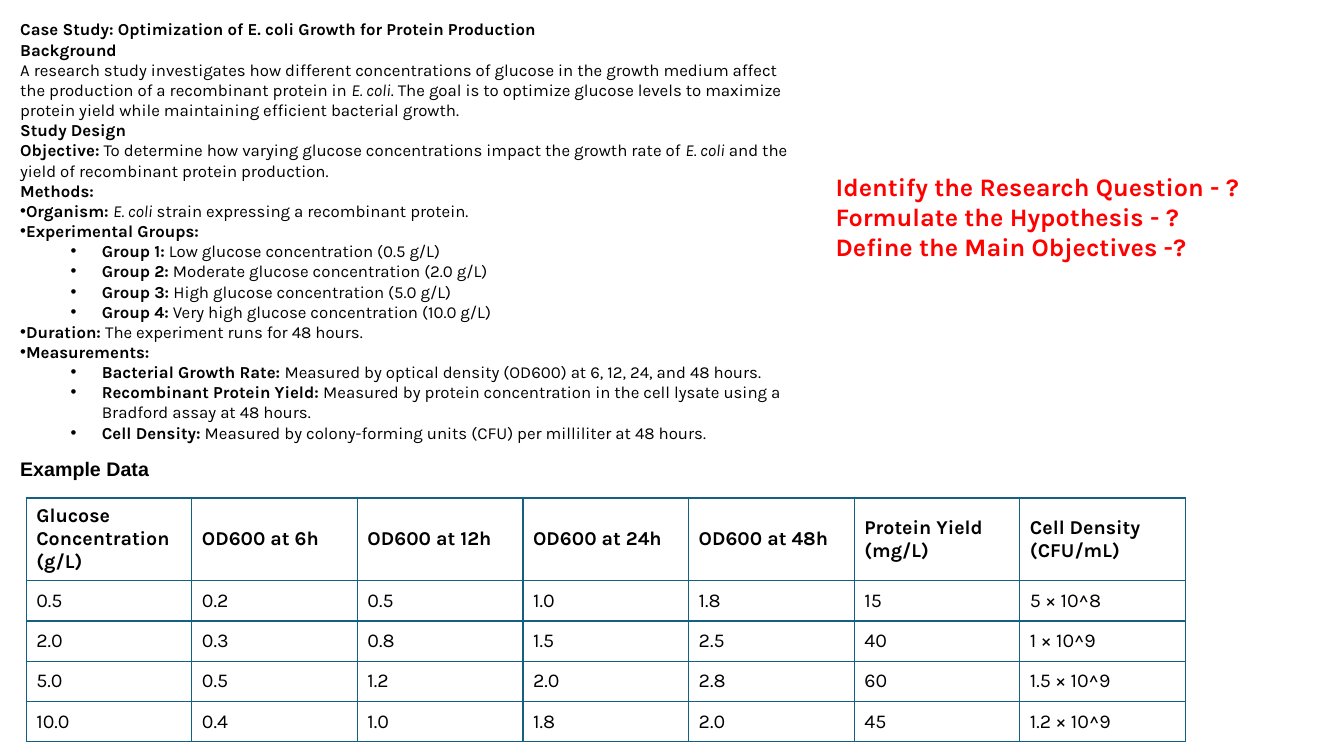
from pptx import Presentation
from pptx.dml.color import RGBColor
from pptx.enum import text
from pptx.oxml import parse_xml
from pptx.oxml.ns import nsdecls
from pptx.util import Inches, Pt

BLACK, RED, TEAL = "000000", "FF0000", "156082"
SPECIES = "E. coli"

# (bullet level or None, bold label, regular text)
CASE_STUDY = [
    (None, "Case Study: Optimization of E. coli Growth for Protein Production", ""),
    (None, "Background", ""),
    (None, "", "A research study investigates how different concentrations of glucose in the "
               "growth medium affect the production of a recombinant protein in E. coli. The goal "
               "is to optimize glucose levels to maximize protein yield while maintaining "
               "efficient bacterial growth."),
    (None, "Study Design", ""),
    (None, "Objective:", " To determine how varying glucose concentrations impact the growth rate "
                         "of E. coli and the yield of recombinant protein production."),
    (None, "Methods:", ""),
    (0, "Organism: ", "E. coli strain expressing a recombinant protein."),
    (0, "Experimental Groups:", ""),
    (1, "Group 1:", " Low glucose concentration (0.5 g/L)"),
    (1, "Group 2:", " Moderate glucose concentration (2.0 g/L)"),
    (1, "Group 3:", " High glucose concentration (5.0 g/L)"),
    (1, "Group 4:", " Very high glucose concentration (10.0 g/L)"),
    (0, "Duration:", " The experiment runs for 48 hours."),
    (0, "Measurements:", ""),
    (1, "Bacterial Growth Rate:", " Measured by optical density (OD600) at 6, 12, 24, and 48 hours."),
    (1, "Recombinant Protein Yield:", " Measured by protein concentration in the cell lysate using a "
                                      "Bradford assay at 48 hours."),
    (1, "Cell Density:", " Measured by colony-forming units (CFU) per milliliter at 48 hours."),
]
TASKS = [
    "Identify the Research Question - ?",
    "Formulate the Hypothesis - ?",
    "Define the Main Objectives -?",
]
DATA_TITLE = "Example Data"
DATA = [
    ["Glucose Concentration (g/L)", "OD600 at 6h", "OD600 at 12h", "OD600 at 24h",
     "OD600 at 48h", "Protein Yield (mg/L)", "Cell Density (CFU/mL)"],
    ["0.5", "0.2", "0.5", "1.0", "1.8", "15", "5 × 10^8"],
    ["2.0", "0.3", "0.8", "1.5", "2.5", "40", "1 × 10^9"],
    ["5.0", "0.5", "1.2", "2.0", "2.8", "60", "1.5 × 10^9"],
    ["10.0", "0.4", "1.0", "1.8", "2.0", "45", "1.2 × 10^9"],
]


def color(hex_string):
    return RGBColor.from_string(hex_string)


def place(shape, left, top, width, height):
    shape.left, shape.top = Inches(left), Inches(top)
    shape.width, shape.height = Inches(width), Inches(height)


def style(paragraph, size, bold=None, hex_string=BLACK, font="Karla"):
    paragraph.font.name, paragraph.font.size = font, Pt(size)
    paragraph.font.bold = bold
    paragraph.font.color.rgb = color(hex_string)
    paragraph.alignment = text.PP_ALIGN.LEFT
    paragraph.space_before = Pt(0)


def paragraphs(frame, count):
    """Return the frame's first paragraph and as many new ones as needed."""
    return [frame.paragraphs[0]] + [frame.add_paragraph() for _ in range(count - 1)]


def set_bullet(paragraph, level):
    properties = paragraph._p.get_or_add_pPr()
    margin, indent = (0.81, -0.31) if level == 1 else (0, 0)
    properties.set("marL", str(Inches(margin)))
    properties.set("indent", str(Inches(indent)))
    if level is None:
        properties.append(parse_xml(f"<a:buNone {nsdecls('a')}/>"))
        return
    paragraph.level = level
    properties.append(parse_xml(f'<a:buFont {nsdecls("a")} typeface="Arial"/>'))
    properties.append(parse_xml(f'<a:buChar {nsdecls("a")} char="•"/>'))


def add_run(paragraph, words, bold=False, italic=False):
    if words:
        run = paragraph.add_run()
        run.text, run.font.bold, run.font.italic = words, bold, italic


def set_borders(cell):
    properties = cell._tc.get_or_add_tcPr()
    for index, side in enumerate(("lnL", "lnR", "lnT", "lnB")):
        properties.insert(index, parse_xml(
            f'<a:{side} {nsdecls("a")} w="{Pt(1)}"><a:solidFill><a:srgbClr val="{TEAL}"/>'
            f'</a:solidFill></a:{side}>'))


def add_case_study(body):
    place(body, 0.1, 0.14, 7.92, 4.34)
    frame = body.text_frame
    frame.auto_size = text.MSO_AUTO_SIZE.NONE
    for paragraph, (level, label, words) in zip(paragraphs(frame, len(CASE_STUDY)), CASE_STUDY):
        style(paragraph, 12)
        set_bullet(paragraph, level)
        add_run(paragraph, label, bold=True)
        for index, part in enumerate(words.split(SPECIES)):
            if index:
                add_run(paragraph, SPECIES, italic=True)
            add_run(paragraph, part)


def add_data_title(title):
    place(title, 0.1, 4.48, 1.49, 0.34)
    frame = title.text_frame
    frame.text = DATA_TITLE
    frame.auto_size = text.MSO_AUTO_SIZE.NONE
    frame.word_wrap = False
    frame.vertical_anchor = text.MSO_ANCHOR.MIDDLE
    style(frame.paragraphs[0], 14, True, font="Arial")


def add_data_table(slide):
    table = slide.shapes.add_table(len(DATA), len(DATA[0]), Inches(0.26), Inches(4.94),
                                   Inches(11.5), Inches(2.42)).table
    table.first_row = table.horz_banding = False
    for index, row in enumerate(table.rows):
        row.height = Inches(0.4 if index else 0.82)
    for row_index, values in enumerate(DATA):
        for column_index, value in enumerate(values):
            cell = table.cell(row_index, column_index)
            cell.text = value
            cell.vertical_anchor = text.MSO_ANCHOR.MIDDLE
            cell.fill.background()
            set_borders(cell)
            style(cell.text_frame.paragraphs[0], 14, row_index == 0)


def add_tasks(slide):
    box = slide.shapes.add_textbox(Inches(8.19), Inches(1.65), Inches(5.14), Inches(1.31))
    box.text_frame.word_wrap = True
    for paragraph, task in zip(paragraphs(box.text_frame, len(TASKS)), TASKS):
        paragraph.text = task
        style(paragraph, 18, True, RED)


def main():
    presentation = Presentation()
    presentation.slide_width, presentation.slide_height = Inches(13.33), Inches(7.5)
    slide = presentation.slides.add_slide(presentation.slide_layouts[1])
    add_case_study(slide.placeholders[1])
    add_data_title(slide.shapes.title)
    add_data_table(slide)
    add_tasks(slide)
    presentation.save("out.pptx")


if __name__ == "__main__":
    main()
